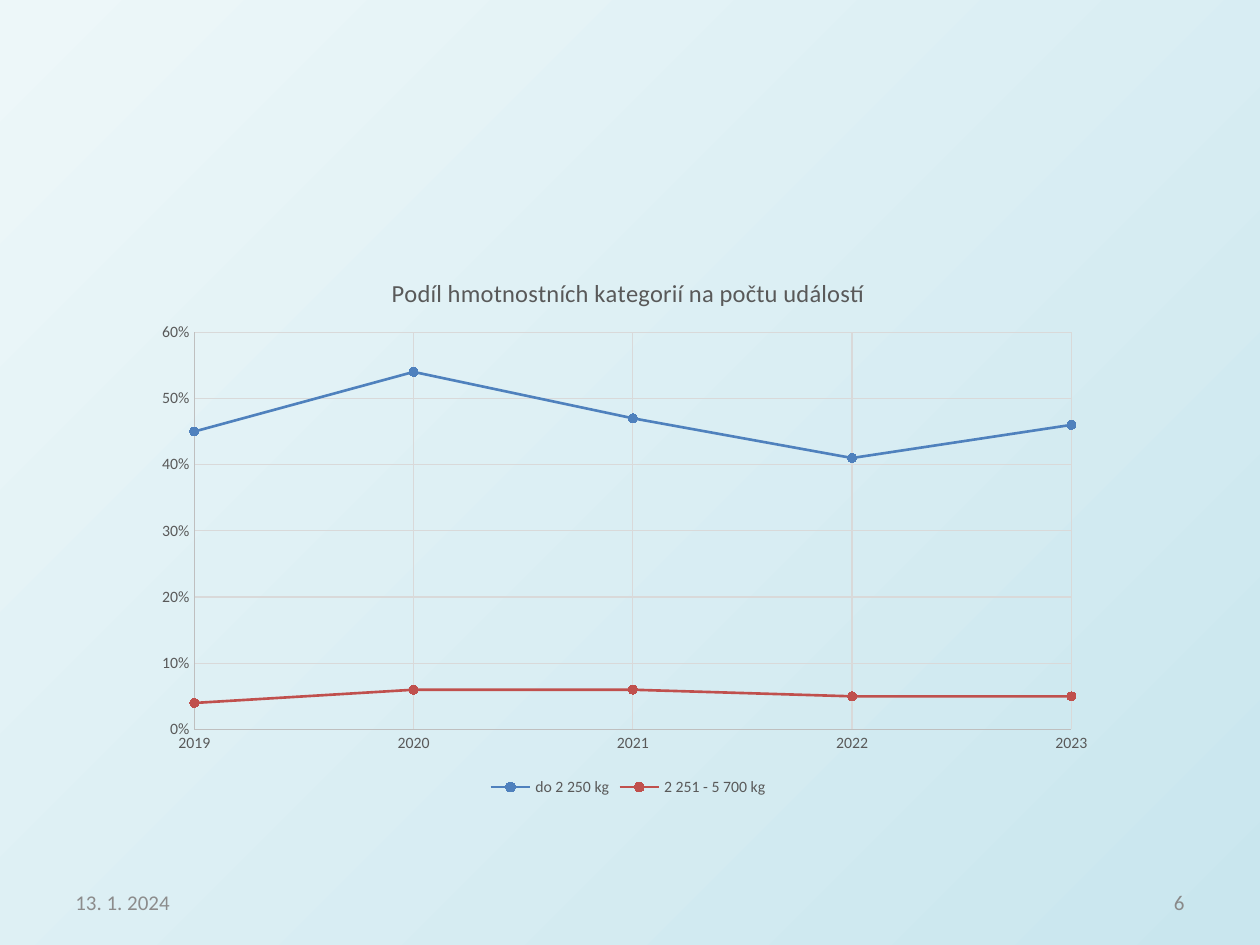
import dataclasses

import lxml.etree
import pptx
import pptx.chart.data
import pptx.dml.color
import pptx.enum.chart
import pptx.enum.text
import pptx.oxml.ns
import pptx.util


@dataclasses.dataclass(frozen=True)
class Theme:
    font: str = "Calibri"
    sky_start: str = "EDF7F9"
    sky_end: str = "C9E6EE"
    date_color: str = "8C8C8C"
    number_color: str = "898989"
    chart_text: str = "595959"
    axis: str = "BFBFBF"
    grid: str = "D9D9D9"
    light_aircraft: str = "4F81BD"
    heavy_aircraft: str = "C0504D"
    title_size: int = 14
    footer_size: int = 12
    base_size: int = 10
    label_size: int = 9


THEME = Theme()
WIDTH = pptx.util.Inches(10)
HEIGHT = pptx.util.Inches(7.5)
MARGIN = 0.05
FOOTER_WIDTH = 0.23
YEARS = range(2019, 2024)
WEIGHT_SHARES = [
    ("do 2 250 kg", [0.45, 0.54, 0.47, 0.41, 0.46], THEME.light_aircraft),
    ("2 251 - 5 700 kg", [0.04, 0.06, 0.06, 0.05, 0.05], THEME.heavy_aircraft),
]


def rgb(color):
    return pptx.dml.color.RGBColor.from_string(color)


def frame(left, top, width, height):
    return [int(share * side) for share, side in
            zip((left, top, width, height), (WIDTH, HEIGHT, WIDTH, HEIGHT))]


def style_font(font, size, color):
    font.name = THEME.font
    font.size = pptx.util.Pt(size)
    font.bold = False
    font.color.rgb = rgb(color)


def style_line(line, color, width):
    line.color.rgb = rgb(color)
    line.width = pptx.util.Pt(width)


def paint_background(slide):
    sky = slide.background.fill
    sky.gradient()
    sky.gradient_angle = 315
    for stop, color in zip(sky.gradient_stops, (THEME.sky_start, THEME.sky_end)):
        stop.color.rgb = rgb(color)


def add_footer(slide, text, left, alignment, color):
    footer = slide.shapes.add_textbox(*frame(left, 0.93, FOOTER_WIDTH, 0.05)).text_frame
    footer.word_wrap = True
    footer.vertical_anchor = pptx.enum.text.MSO_ANCHOR.MIDDLE
    line = footer.paragraphs[0]
    line.text = text
    line.alignment = alignment
    style_font(line.font, THEME.footer_size, color)


def place_in_chart(parent, index, **shares):
    qn = pptx.oxml.ns.qn
    for previous in parent.findall(qn("c:layout")):
        parent.remove(previous)
    layout = lxml.etree.Element(qn("c:layout"))
    manual = lxml.etree.SubElement(layout, qn("c:manualLayout"))
    settings = {"xMode": "edge", "yMode": "edge", **shares}
    if "w" in shares:
        settings = {"layoutTarget": "inner", **settings}
    for name, value in settings.items():
        lxml.etree.SubElement(manual, qn(f"c:{name}")).set("val", str(value))
    parent.insert(index, layout)


def style_axis(axis, low, high, step, number_format):
    axis.minimum_scale = low
    axis.maximum_scale = high
    axis.major_unit = step
    axis.major_tick_mark = pptx.enum.chart.XL_TICK_MARK.NONE
    axis.minor_tick_mark = pptx.enum.chart.XL_TICK_MARK.NONE
    axis.has_major_gridlines = True
    style_line(axis.major_gridlines.format.line, THEME.grid, 0.75)
    style_line(axis.format.line, THEME.axis, 0.75)
    axis.tick_labels.number_format = number_format
    axis.tick_labels.number_format_is_linked = False
    style_font(axis.tick_labels.font, THEME.label_size, THEME.chart_text)


def style_series(series, color):
    series.smooth = True
    style_line(series.format.line, color, 1.5)
    series.marker.style = pptx.enum.chart.XL_MARKER_STYLE.CIRCLE
    series.marker.size = 5
    series.marker.format.fill.solid()
    series.marker.format.fill.fore_color.rgb = rgb(color)
    style_line(series.marker.format.line, color, 0.75)


def add_share_chart(slide):
    shares = pptx.chart.data.XyChartData(number_format="0%")
    for name, values, _ in WEIGHT_SHARES:
        category = shares.add_series(name)
        for year, value in zip(YEARS, values):
            category.add_data_point(year, value)
    chart = slide.shapes.add_chart(
        pptx.enum.chart.XL_CHART_TYPE.XY_SCATTER_SMOOTH,
        *frame(0.116, 0.264, 0.765, 0.584), shares).chart
    style_font(chart.font, THEME.base_size, "000000")

    chart.has_title = True
    heading = chart.chart_title.text_frame.paragraphs[0]
    heading.text = "Podíl hmotnostních kategorií na počtu událostí"
    style_font(heading.font, THEME.title_size, THEME.chart_text)
    chart.chart_title.include_in_layout = False
    title = chart.chart_title.format and chart.chart_title._element
    place_in_chart(title, 1, x=0.25, y=0.04)
    place_in_chart(chart._chartSpace.chart.plotArea, 0, x=0.05, y=0.15, w=0.91, h=0.72)

    style_axis(chart.category_axis, YEARS[0], YEARS[-1], 1, "0")
    style_axis(chart.value_axis, 0, 0.6, 0.1, "0%")

    chart.has_legend = True
    chart.legend.position = pptx.enum.chart.XL_LEGEND_POSITION.BOTTOM
    chart.legend.include_in_layout = False
    style_font(chart.legend.font, THEME.label_size, THEME.chart_text)

    chart.plots[0].vary_by_categories = False
    for series, (_, _, color) in zip(chart.plots[0].series, WEIGHT_SHARES):
        style_series(series, color)


def main():
    deck = pptx.Presentation()
    deck.slide_width = WIDTH
    deck.slide_height = HEIGHT
    slide = deck.slides.add_slide(deck.slide_layouts[6])
    paint_background(slide)
    add_footer(slide, "13. 1. 2024", MARGIN, pptx.enum.text.PP_ALIGN.LEFT, THEME.date_color)
    add_footer(slide, "6", 1 - MARGIN - FOOTER_WIDTH, pptx.enum.text.PP_ALIGN.RIGHT,
               THEME.number_color)
    add_share_chart(slide)
    deck.save("out.pptx")


if __name__ == "__main__":
    main()
